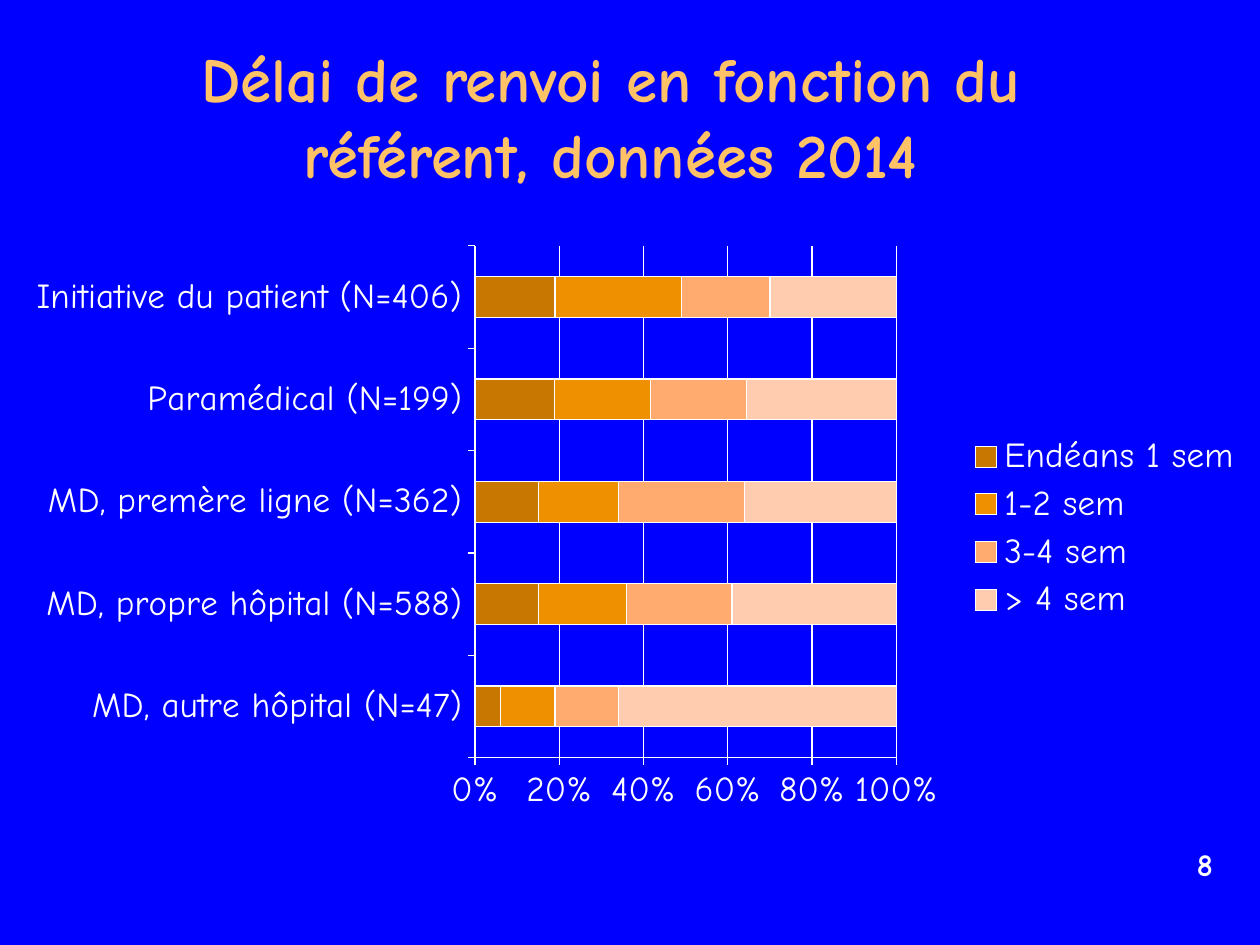
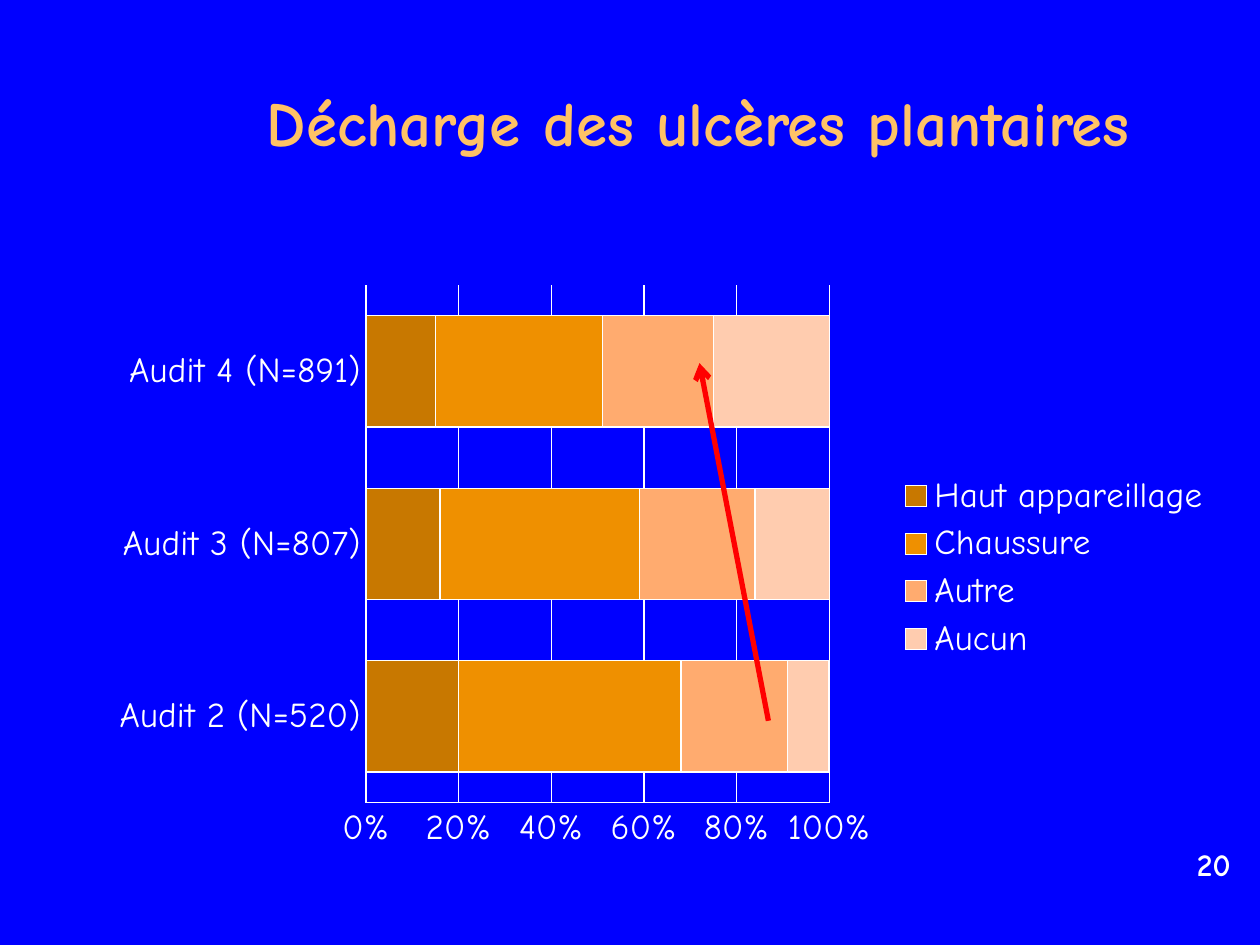
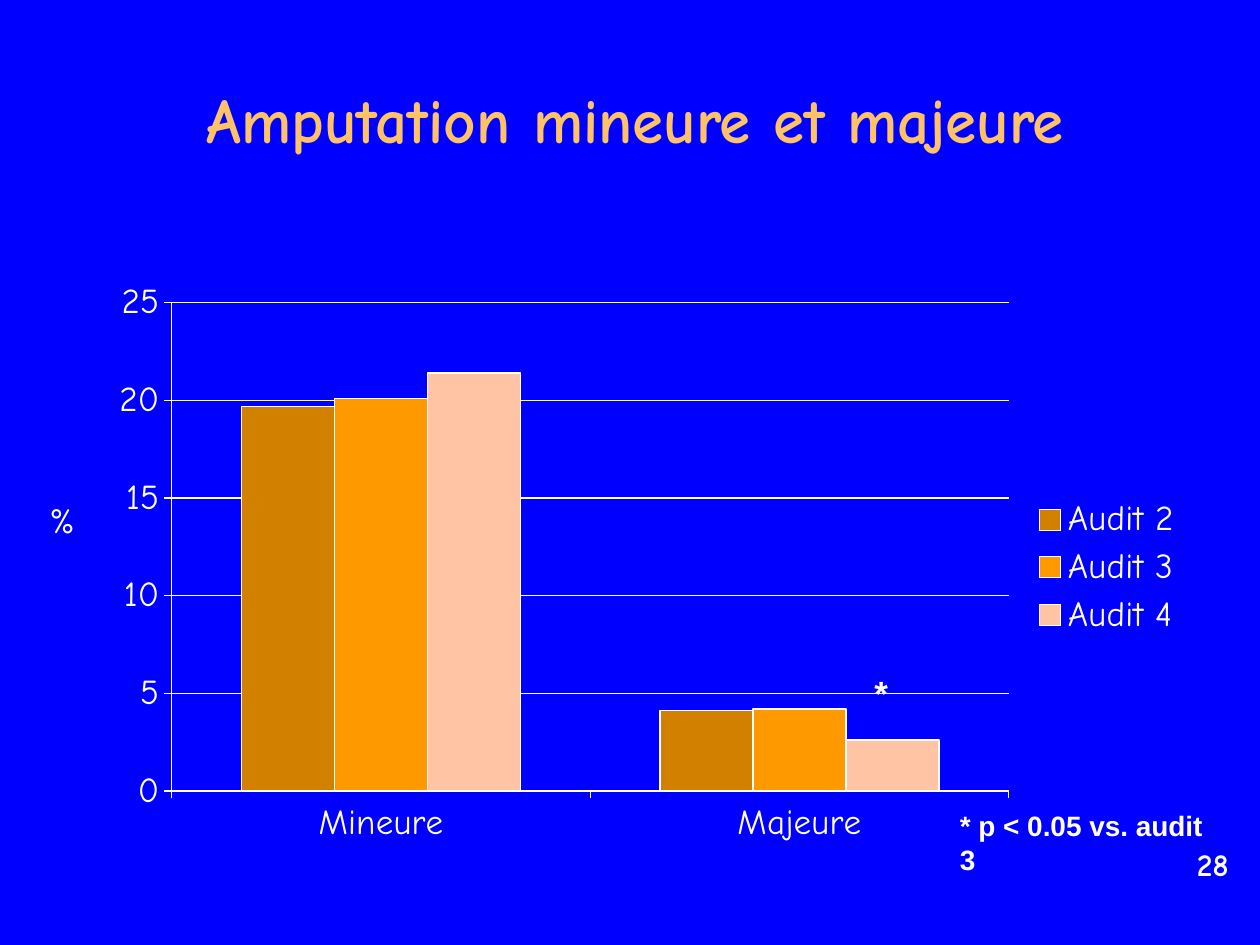
from lxml import etree
from pptx import Presentation
from pptx.chart.data import CategoryChartData
from pptx.dml.color import RGBColor
from pptx.enum.chart import XL_CHART_TYPE, XL_LEGEND_POSITION, XL_TICK_MARK
from pptx.enum.shapes import MSO_CONNECTOR
from pptx.enum.text import MSO_ANCHOR, PP_ALIGN
from pptx.oxml import parse_xml
from pptx.oxml.ns import nsdecls, qn
from pptx.util import Cm, Pt

BLUE = RGBColor(0x00, 0x00, 0xFF)
GOLD = RGBColor(0xFF, 0xC2, 0x66)
WHITE = RGBColor(0xFF, 0xFF, 0xFF)
RED = RGBColor(0xFF, 0x00, 0x00)
SHADES = [RGBColor(0xC8, 0x78, 0x00), RGBColor(0xEF, 0x90, 0x00),
          RGBColor(0xFF, 0xAB, 0x6F), RGBColor(0xFF, 0xCC, 0xAF)]
TRIO = [RGBColor(0xD2, 0x80, 0x00), RGBColor(0xFF, 0x99, 0x00),
        RGBColor(0xFF, 0xC4, 0xA4)]
HAND = "Comic Neue"
SANS = "Arial"
STACK = XL_CHART_TYPE.BAR_STACKED_100
COLUMN = XL_CHART_TYPE.COLUMN_CLUSTERED


class Deck:
    def __init__(self):
        self.prs = Presentation()
        self.prs.slide_width, self.prs.slide_height = Cm(25.4), Cm(19.05)
        fill = self.prs.slide_master.background.fill
        fill.solid()
        fill.fore_color.rgb = BLUE
        self.slide = None

    def page(self, title, box, number):
        """Start a slide with its title and page number."""
        self.slide = self.prs.slides.add_slide(self.prs.slide_layouts[5])
        head = self.slide.shapes.title
        head.left, head.top, head.width, head.height = map(Cm, box)
        head.text_frame.vertical_anchor = MSO_ANCHOR.MIDDLE
        self.run(head.text_frame, title, 36, HAND, GOLD, True, PP_ALIGN.CENTER)
        self.text(str(number), (23.88, 16.92, 1.22, 0.64), 18, bold=True)

    def run(self, frame, words, size, face, color, bold, align):
        """Add one formatted run to the first paragraph."""
        para = frame.paragraphs[0]
        para.alignment = align
        part = para.add_run()
        part.text = words
        font = part.font
        font.size, font.name, font.bold = Pt(size), face, bold
        font.color.rgb = color

    def text(self, words, box, size, face=HAND, bold=False,
             align=PP_ALIGN.LEFT, wrap=False):
        frame = self.slide.shapes.add_textbox(*map(Cm, box)).text_frame
        frame.word_wrap = wrap
        self.run(frame, words, size, face, WHITE, bold, align)

    def arrow(self, start, end):
        link = self.slide.shapes.add_connector(
            MSO_CONNECTOR.STRAIGHT, *map(Cm, start + end))
        link.line.color.rgb = RED
        link.line.width = Pt(3)
        props = link._element.spPr
        etree.SubElement(props.find(qn("a:ln")), qn("a:tailEnd"), type="arrow")
        etree.SubElement(props, qn("a:effectLst"))

    def chart(self, kind, box, cats, series, colors, inner, gap=150,
              tick=XL_TICK_MARK.OUTSIDE):
        """Add a bar chart; inner gives the plot area as shares of the chart."""
        stacked = kind == STACK
        data = CategoryChartData()
        data.categories = cats
        for name, vals in series.items():
            data.add_series(name, vals)
        chart = self.slide.shapes.add_chart(kind, *map(Cm, box), data).chart
        chart.has_title = False
        chart.font.name, chart.font.size = HAND, Pt(20)
        chart.font.color.rgb = WHITE
        chart.has_legend = True
        chart.legend.position = XL_LEGEND_POSITION.RIGHT
        chart.legend.include_in_layout = False

        plot = chart.plots[0]
        plot.vary_by_categories = False
        plot.gap_width = gap
        plot.overlap = 100 if stacked else 0
        for bar, color in zip(plot.series, colors):
            bar.format.fill.solid()
            bar.format.fill.fore_color.rgb = color
            self.thin(bar.format.line)

        values = chart.value_axis
        for axis in (chart.category_axis, values):
            axis.major_tick_mark = tick
            axis.minor_tick_mark = XL_TICK_MARK.NONE
            self.thin(axis.format.line)
        values.has_major_gridlines = True
        self.thin(values.major_gridlines.format.line)
        values.minimum_scale = 0
        values.maximum_scale, values.major_unit = (1, 0.2) if stacked else (25, 5)
        values.tick_labels.number_format = "0%" if stacked else "0"
        values.tick_labels.number_format_is_linked = False
        self.place(chart, inner)

    def thin(self, line):
        line.color.rgb = WHITE
        line.width = Pt(0.75)

    def place(self, chart, inner):
        """Fix the inner plot area."""
        area = chart._chartSpace.chart.plotArea
        for old in area.findall(qn("c:layout")):
            area.remove(old)
        modes = '<c:xMode val="edge"/><c:yMode val="edge"/>'
        sizes = "".join(f'<c:{key} val="{val}"/>' for key, val in zip("xywh", inner))
        area.insert(0, parse_xml(
            f'<c:layout {nsdecls("c")}><c:manualLayout><c:layoutTarget val="inner"/>'
            f'{modes}{sizes}</c:manualLayout></c:layout>'))


def delay(deck):
    deck.page("Délai de renvoi en fonction du référent, données 2014",
              (1.91, 0.74, 20.8, 3.18), 8)
    deck.chart(STACK, (0.33, 4.72, 24.99, 11.86),
               ["MD, autre hôpital (N=47)", "MD, propre hôpital (N=588)",
                "MD, premère ligne (N=362)", "Paramédical (N=199)",
                "Initiative du patient (N=406)"],
               {"Endéans 1 sem": [6, 15, 15, 19, 19],
                "1-2 sem": [13, 21, 19, 23, 30],
                "3-4 sem": [15, 25, 30, 23, 21],
                "> 4 sem": [66, 39, 36, 36, 30]},
               SHADES, (0.37, 0.02, 0.34, 0.87))


def relief(deck):
    deck.page("Décharge des ulcères plantaires", (3.38, 1.4, 21.39, 2.11), 20)
    deck.chart(STACK, (1.91, 5.51, 22.78, 11.86),
               ["Audit 2 (N=520)", "Audit 3 (N=807)", "Audit 4 (N=891)"],
               {"Haut appareillage": [20, 16, 15], "Chaussure": [48, 43, 36],
                "Autre": [23, 25, 24], "Aucun": [9, 16, 25]},
               SHADES, (0.24, 0.02, 0.41, 0.88), 55, XL_TICK_MARK.NONE)
    deck.arrow((15.49, 14.53), (14.1, 7.32))


def surgery(deck):
    deck.page("Amputation mineure et majeure", (2.11, 1.32, 21.39, 2.11), 28)
    deck.chart(COLUMN, (1.91, 5.51, 22.2, 11.86), ["Mineure", "Majeure"],
               {"Audit 2": [19.7, 4.1], "Audit 3": [20.1, 4.2],
                "Audit 4": [21.4, 2.6]},
               TRIO, (0.07, 0.05, 0.76, 0.83))
    deck.text("* p < 0.05 vs. audit 3", (19.1, 16.18, 5.74, 0.94), 16, SANS,
              True, wrap=True)
    deck.text("*", (17.37, 13.41, 0.79, 1.12), 20, SANS, True, PP_ALIGN.CENTER)
    deck.text("%", (0.71, 9.93, 1.09, 1.12), 20, align=PP_ALIGN.CENTER)


def main():
    deck = Deck()
    for build in (delay, relief, surgery):
        build(deck)
    deck.prs.save("out.pptx")


if __name__ == "__main__":
    main()
